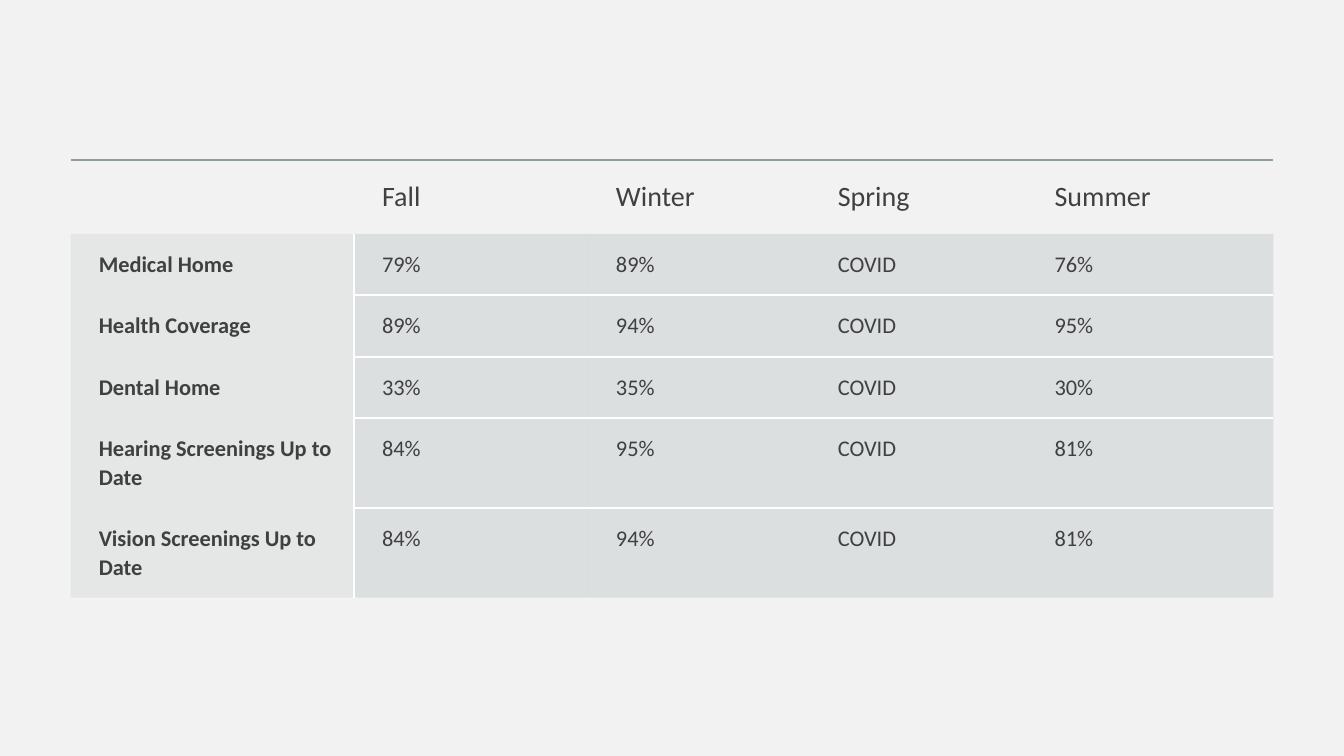
from lxml.etree import SubElement
from pptx import Presentation
from pptx.dml.color import RGBColor
from pptx.oxml import parse_xml
from pptx.oxml.ns import nsdecls, qn
from pptx.util import Inches, Pt

ROWS = [
    ("", "Fall", "Winter", "Spring", "Summer"),
    ("Medical Home", "79%", "89%", "COVID", "76%"),
    ("Health Coverage", "89%", "94%", "COVID", "95%"),
    ("Dental Home", "33%", "35%", "COVID", "30%"),
    ("Hearing Screenings Up to Date", "84%", "95%", "COVID", "81%"),
    ("Vision Screenings Up to Date", "84%", "94%", "COVID", "81%"),
]
WIDTHS = [2.81, 2.32, 2.2, 2.15, 2.45]
HEIGHTS = [0.73, 0.61, 0.61, 0.61, 0.89, 0.89]
LEFT, TOP = 0.7, 1.59
FONT = "Calibri"
PAGE_COLOR = RGBColor(0xF2, 0xF2, 0xF2)
TEXT_COLOR = RGBColor(0x40, 0x40, 0x40)
CELL_COLOR = RGBColor(0xB4, 0xBC, 0xBE)
RULE_COLOR = RGBColor(0x8F, 0x9A, 0x9D)
WHITE = RGBColor(0xFF, 0xFF, 0xFF)


def set_opacity(color, percent):
    SubElement(color, qn("a:alpha")).set("val", str(percent * 1000))


def set_borders(cell, borders):
    properties = cell._tc.get_or_add_tcPr()
    for index, side in enumerate("LRTB"):
        line = parse_xml(f'<a:ln{side} {nsdecls("a")} w="{Pt(1.5)}"/>')
        if side in borders:
            color, opacity = borders[side]
            fill = SubElement(line, qn("a:solidFill"))
            shade = SubElement(fill, qn("a:srgbClr"))
            shade.set("val", str(color))
            if opacity < 100:
                set_opacity(shade, opacity)
        else:
            SubElement(line, qn("a:noFill"))
        properties.insert(index, line)


def borders_at(row, column):
    if row == 0:
        return {"T": (RULE_COLOR, 60)}
    if column == 0:
        return {"R": (WHITE, 100)}
    sides = ""
    if column == 1:
        sides += "L"
    if row > 1:
        sides += "T"
    if row < len(ROWS) - 1:
        sides += "B"
    return {side: (WHITE, 100) for side in sides}


def fill_cell(cell, text, row, column):
    is_header, is_label = row == 0, column == 0
    if is_header:
        cell.fill.background()
    else:
        cell.fill.solid()
        cell.fill.fore_color.rgb = CELL_COLOR
        shade = cell._tc.tcPr.find(".//" + qn("a:srgbClr"))
        set_opacity(shade, 20 if is_label else 35)
    set_borders(cell, borders_at(row, column))
    if not text:
        return
    inset = Inches(0.17 if is_header else 0.15)
    cell.margin_left = Inches(0.28)
    cell.margin_right = cell.margin_top = cell.margin_bottom = inset
    para = cell.text_frame.paragraphs[0]
    para.line_spacing = 1.07
    span = para.add_run()
    span.text = text
    span.font.name = FONT
    span.font.size = Pt(20 if is_header else 16)
    span.font.bold = is_label
    span.font.color.rgb = TEXT_COLOR


def main():
    deck = Presentation()
    deck.slide_width, deck.slide_height = Inches(13.33), Inches(7.5)
    page = deck.slides.add_slide(deck.slide_layouts[6])
    page.background.fill.solid()
    page.background.fill.fore_color.rgb = PAGE_COLOR

    table = page.shapes.add_table(
        len(ROWS), len(WIDTHS), Inches(LEFT), Inches(TOP),
        Inches(sum(WIDTHS)), Inches(sum(HEIGHTS))).table
    table.first_row = table.horz_banding = False
    for column, width in zip(table.columns, WIDTHS):
        column.width = Inches(width)
    for row, height in zip(table.rows, HEIGHTS):
        row.height = Inches(height)
    for row, texts in enumerate(ROWS):
        for column, text in enumerate(texts):
            fill_cell(table.cell(row, column), text, row, column)
    deck.save("out.pptx")


if __name__ == "__main__":
    main()
